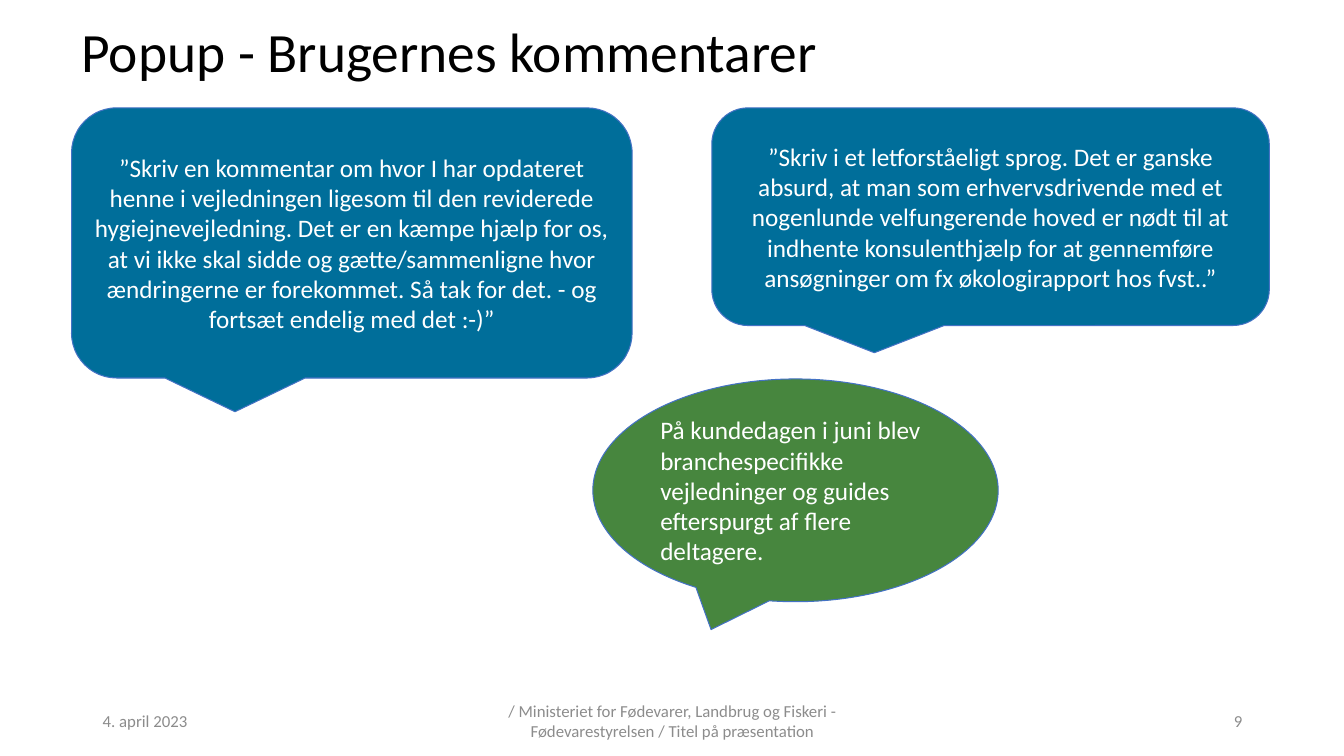
from pptx import Presentation
from pptx.dml.color import RGBColor
from pptx.enum.shapes import MSO_SHAPE as Shape
from pptx.enum.text import MSO_ANCHOR as Anchor, PP_ALIGN as Align
from pptx.util import Inches, Pt

FONT = "Calibri"
BLUE, GREEN, OUTLINE = "006E9A", "47863E", "4472C4"
WHITE, BLACK, GRAY = "FFFFFF", "000000", "8C8C8C"


def color(value):
    return RGBColor.from_string(value)


def write(shape, text, size, text_color, align, inset=None):
    """Fill a shape with one formatted, vertically centred paragraph."""
    frame = shape.text_frame
    frame.text = text
    frame.word_wrap = True
    frame.vertical_anchor = Anchor.MIDDLE
    if inset is not None:
        frame.margin_left = frame.margin_right = Inches(inset)
        frame.margin_top = frame.margin_bottom = Inches(inset)
    paragraph = frame.paragraphs[0]
    paragraph.alignment = align
    font = paragraph.runs[0].font
    font.name, font.size = FONT, Pt(size)
    font.color.rgb = color(text_color)
    return paragraph


def add_title(slide, box, text):
    shape = slide.shapes.add_textbox(*map(Inches, box))
    write(shape, text, 39.6, BLACK, Align.LEFT).line_spacing = 0.9


def add_callout(slide, box, kind, fill, text, align):
    shape = slide.shapes.add_shape(kind, *map(Inches, box))
    shape.shadow.inherit = False
    shape.fill.solid()
    shape.fill.fore_color.rgb = color(fill)
    shape.line.color.rgb = color(OUTLINE)
    shape.line.width = Pt(0.75)
    write(shape, text, 18, WHITE, align, inset=0.08)


def add_footer(slide, box, date, label, number):
    """Place date, label and page number side by side across the box."""
    left, top, width, height = box
    side, gap = 3, 0.5
    middle = width - 2 * (side + gap)
    for text, part_width, align in ((date, side, Align.LEFT),
                                    (label, middle, Align.CENTER),
                                    (number, side, Align.RIGHT)):
        part = (left, top, part_width, height)
        shape = slide.shapes.add_textbox(*map(Inches, part))
        write(shape, text, 12, GRAY, align)
        left += part_width + gap


def main():
    presentation = Presentation()
    presentation.slide_width = Inches(13.33)
    presentation.slide_height = Inches(7.5)
    slide = presentation.slides.add_slide(presentation.slide_layouts[6])

    add_title(slide, (0.71, 0.29, 11.91, 0.51), "Popup - Brugernes kommentarer")

    # User comments
    add_callout(
        slide, (0.71, 1.07, 5.56, 2.68), Shape.ROUNDED_RECTANGULAR_CALLOUT, BLUE,
        "”Skriv en kommentar om hvor I har opdateret henne i vejledningen "
        "ligesom til den reviderede hygiejnevejledning. Det er en kæmpe hjælp "
        "for os, at vi ikke skal sidde og gætte/sammenligne hvor ændringerne "
        "er forekommet. Så tak for det. - og fortsæt endelig med det :-)”",
        Align.CENTER)
    add_callout(
        slide, (7.06, 1.07, 5.53, 2.16), Shape.ROUNDED_RECTANGULAR_CALLOUT, BLUE,
        "”Skriv i et letforståeligt sprog. Det er ganske absurd, at man som "
        "erhvervsdrivende med et nogenlunde velfungerende hoved er nødt til at "
        "indhente konsulenthjælp for at gennemføre ansøgninger om fx "
        "økologirapport hos fvst..”",
        Align.CENTER)

    # Customer day feedback
    add_callout(
        slide, (5.88, 3.76, 4.02, 2.21), Shape.OVAL_CALLOUT, GREEN,
        "På kundedagen i juni blev branchespecifikke vejledninger og guides "
        "efterspurgt af flere deltagere.",
        Align.LEFT)

    add_footer(
        slide, (0.92, 6.95, 11.5, 0.4), "4. april 2023",
        "/ Ministeriet for Fødevarer, Landbrug og Fiskeri - "
        "Fødevarestyrelsen / Titel på præsentation",
        "9")
    presentation.save("out.pptx")


if __name__ == "__main__":
    main()
